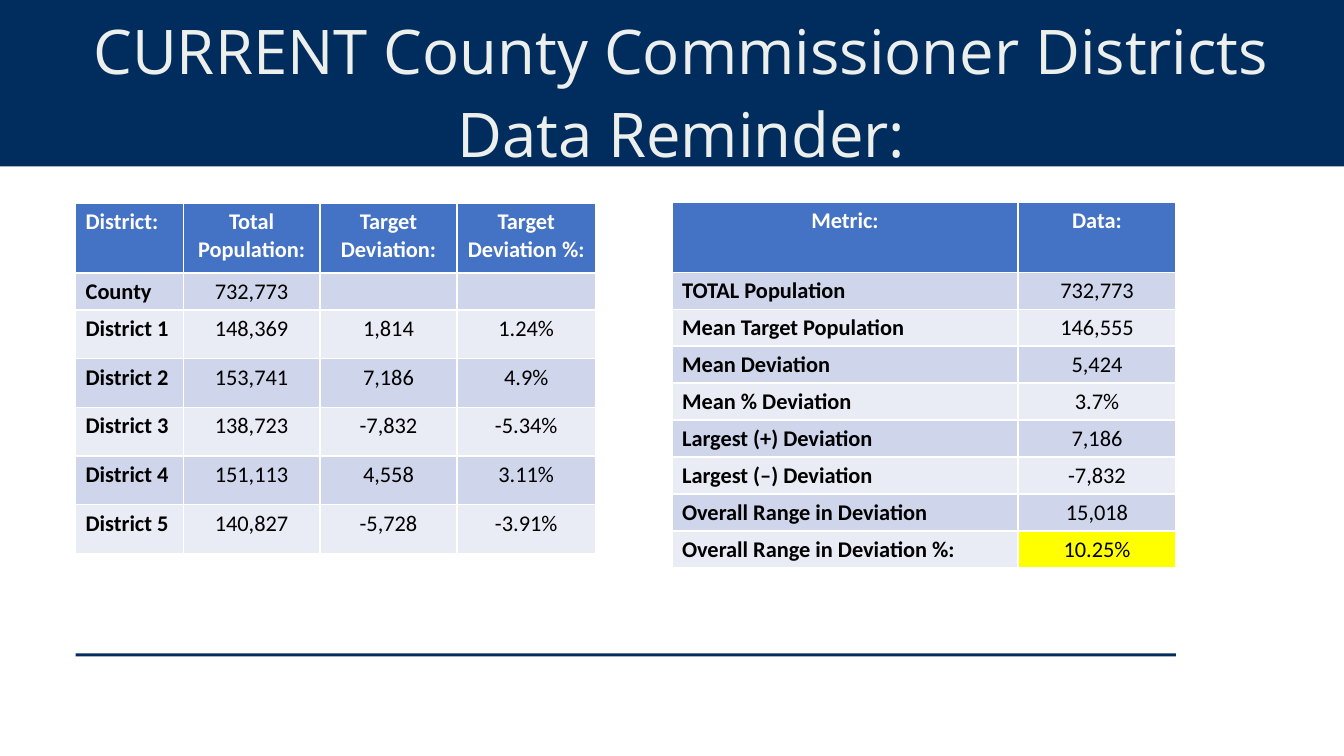
import pptx
import pptx.util
import pptx.dml.color
import pptx.enum.shapes
import pptx.enum.text
import pptx.oxml.ns
from lxml import etree

THEME = {
    "navy": "002D5D", "title": "ECEFEB", "header": "4472C4", "white": "FFFFFF",
    "black": "000000", "bands": ("CFD5EA", "E9EBF5"), "highlight": "FFFF00",
    "title_font": "Open Sans", "table_font": "Calibri",
    "title_size": 44, "table_size": 16, "title_leading": 58.7,
}
COLUMNS, ROWS = 160, 90

deck = pptx.Presentation()
deck.slide_width = pptx.util.Inches(13.33)
deck.slide_height = pptx.util.Inches(7.5)
page = deck.slides.add_slide(deck.slide_layouts[6])


def grid(*lengths):
    """Turn alternating column and row counts into slide lengths."""
    units = (deck.slide_width / COLUMNS, deck.slide_height / ROWS)
    return [round(length * units[i % 2]) for i, length in enumerate(lengths)]


def write(frame, text, *, size, font, color, bold=False, centred=True, leading=None):
    para = frame.paragraphs[0]
    if centred:
        para.alignment = pptx.enum.text.PP_ALIGN.CENTER
    if leading:
        para.line_spacing = pptx.util.Pt(leading)
    if not text:
        # An empty cell takes its height from the end-of-paragraph size.
        etree.SubElement(para._p, pptx.oxml.ns.qn("a:endParaRPr"), sz=str(size * 100))
        return
    span = para.add_run()
    span.text = text
    span.font.size = pptx.util.Pt(size)
    span.font.name = font
    span.font.bold = bold
    span.font.color.rgb = pptx.dml.color.RGBColor.from_string(color)


# Title band and bottom rule
for area in ((0, 0, COLUMNS, 19.8), (9, 77.8, 131, 0.36)):
    bar = page.shapes.add_shape(pptx.enum.shapes.MSO_SHAPE.RECTANGLE, *grid(*area))
    bar.shadow.inherit = False
    bar.fill.solid()
    bar.fill.fore_color.rgb = pptx.dml.color.RGBColor.from_string(THEME["navy"])
    bar.line.fill.background()

title = page.shapes.add_textbox(*grid(3.84, 0.6, 154.6, 19.3)).text_frame
title.word_wrap = True
title.auto_size = pptx.enum.text.MSO_AUTO_SIZE.SHAPE_TO_FIT_TEXT
title.margin_left = title.margin_right = title.margin_top = title.margin_bottom = 0
write(title, "CURRENT County Commissioner Districts Data Reminder:",
      size=THEME["title_size"], font=THEME["title_font"], color=THEME["title"],
      leading=THEME["title_leading"])

# Tables: header first, first column bold
districts = [
    ("District:", "Total Population:", "Target Deviation:", "Target Deviation %:"),
    ("County", "732,773", "", ""),
    ("District 1", "148,369", "1,814", "1.24%"),
    ("District 2", "153,741", "7,186", "4.9%"),
    ("District 3", "138,723", "-7,832", "-5.34%"),
    ("District 4", "151,113", "4,558", "3.11%"),
    ("District 5", "140,827", "-5,728", "-3.91%"),
]
metrics = [
    ("Metric:", "Data:"),
    ("TOTAL Population", "732,773"),
    ("Mean Target Population", "146,555"),
    ("Mean Deviation", "5,424"),
    ("Mean % Deviation", "3.7%"),
    ("Largest (+) Deviation", "7,186"),
    ("Largest (–) Deviation", "-7,832"),
    ("Overall Range in Deviation", "15,018"),
    ("Overall Range in Deviation %:", "10.25%"),
]
HEADER_ROW, LOW_ROW, TALL_ROW = 8.3, 4.4, 5.8
tables = [
    (districts, 9, 24.2, (12.8, 16.3, 16.3, 16.5),
     [HEADER_ROW, LOW_ROW] + [TALL_ROW] * 5, False),
    (metrics, 80, 24.1, (41.2, 18.8),
     [HEADER_ROW] + [LOW_ROW] * 8, True),
]

for records, left, top, widths, heights, first_header_centred in tables:
    table = page.shapes.add_table(
        len(records), len(widths), *grid(left, top, sum(widths), sum(heights))).table
    for column, width in zip(table.columns, widths):
        column.width = grid(width)[0]
    for row, height in zip(table.rows, heights):
        row.height = grid(0, height)[1]
    for r, record in enumerate(records):
        for c, text in enumerate(record):
            is_header = r == 0
            fill = THEME["header"] if is_header else THEME["bands"][(r - 1) % 2]
            if text == "10.25%":
                fill = THEME["highlight"]
            cell = table.cell(r, c)
            cell.fill.solid()
            cell.fill.fore_color.rgb = pptx.dml.color.RGBColor.from_string(fill)
            write(cell.text_frame, text,
                  size=THEME["table_size"], font=THEME["table_font"],
                  color=THEME["white"] if is_header else THEME["black"],
                  bold=is_header or c == 0,
                  centred=c > 0 or (is_header and first_header_centred))

deck.save("out.pptx")
